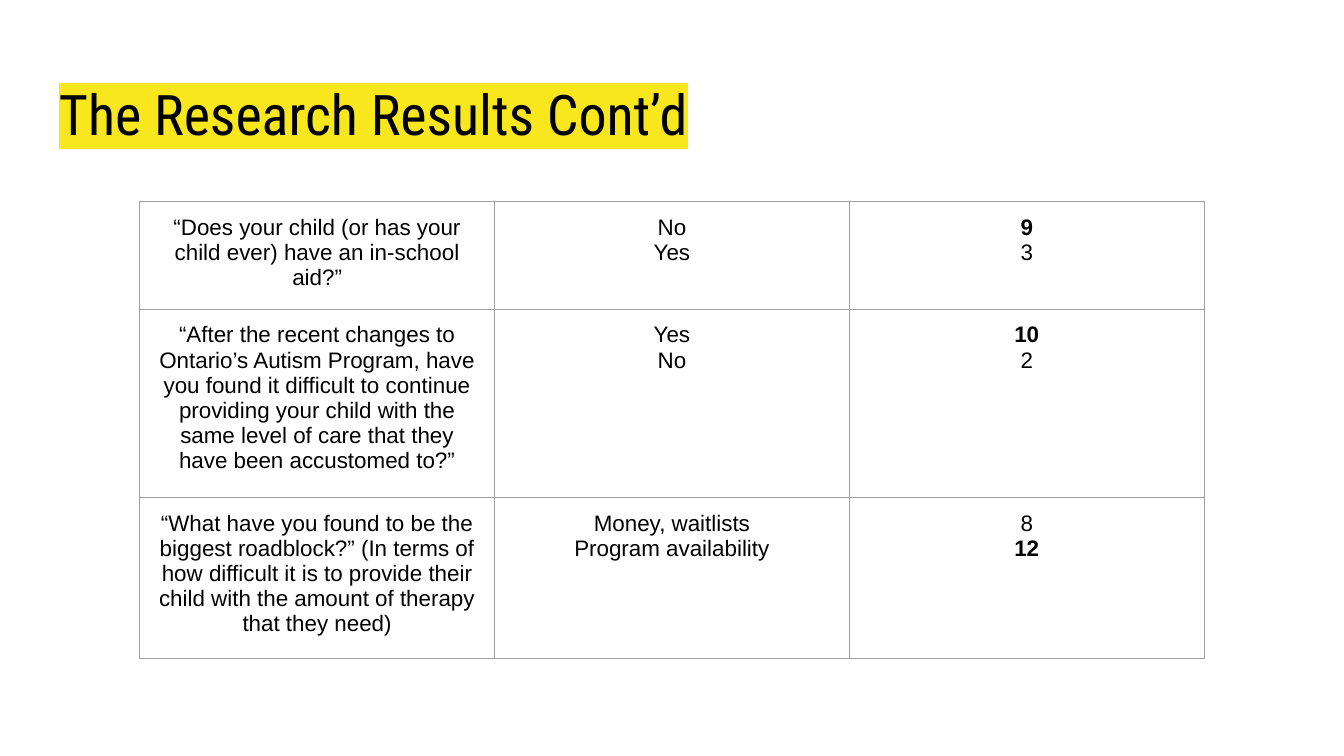
from typing import NamedTuple

import lxml.etree
import pptx
import pptx.dml.color
import pptx.enum.text
import pptx.oxml.ns
import pptx.util

Inches = pptx.util.Inches
Pt = pptx.util.Pt
qn = pptx.oxml.ns.qn

BLACK = "000000"
YELLOW = "F8E71C"
GREY = "9E9E9E"
MARGIN = 0.1
COLUMN_WIDTH = 2.64
ROW_HEIGHT = 0.42  # rows grow to fit their text
FRAME_SIDE = 3.28


class Answer(NamedTuple):
    label: str
    count: str
    leading: bool = False


class Question(NamedTuple):
    wording: str
    answers: list[Answer]


QUESTIONS = [
    Question("“Does your child (or has your child ever) have an in-school aid?”",
             [Answer("No", "9", True), Answer("Yes", "3")]),
    Question("“After the recent changes to Ontario’s Autism Program, have you found it "
             "difficult to continue providing your child with the same level of care "
             "that they have been accustomed to?”",
             [Answer("Yes", "10", True), Answer("No", "2")]),
    Question("“What have you found to be the biggest roadblock?” (In terms of how "
             "difficult it is to provide their child with the amount of therapy that "
             "they need)",
             [Answer("Money, waitlists", "8"),
              Answer("Program availability", "12", True)]),
]


def rgb(value: str) -> pptx.dml.color.RGBColor:
    return pptx.dml.color.RGBColor.from_string(value)


def add_run(paragraph, text: str, font: str, size: float, bold: bool = False):
    run = paragraph.add_run()
    run.text = text
    run.font.name = font
    run.font.size = Pt(size)
    run.font.bold = bold
    run.font.color.rgb = rgb(BLACK)
    return run


def highlight(run, color: str) -> None:
    # The highlight has to follow the text fill
    mark = lxml.etree.Element(qn("a:highlight"))
    lxml.etree.SubElement(mark, qn("a:srgbClr"), val=color)
    run.font._element.find(qn("a:solidFill")).addnext(mark)


def set_borders(cell, color: str, width: float) -> None:
    properties = cell._tc.get_or_add_tcPr()
    for position, side in enumerate(("a:lnL", "a:lnR", "a:lnT", "a:lnB")):
        line = lxml.etree.Element(qn(side), w=str(int(Pt(width))))
        fill = lxml.etree.SubElement(line, qn("a:solidFill"))
        lxml.etree.SubElement(fill, qn("a:srgbClr"), val=color)
        properties.insert(position, line)


def set_margins(holder) -> None:
    holder.margin_left = holder.margin_right = Inches(MARGIN)
    holder.margin_top = holder.margin_bottom = Inches(MARGIN)


def fill_cell(cell, lines: list[tuple[str, bool]]) -> None:
    cell.fill.background()
    set_borders(cell, GREY, 0.75)
    set_margins(cell)
    paragraph = cell.text_frame.paragraphs[0]
    paragraph.alignment = pptx.enum.text.PP_ALIGN.CENTER
    paragraph.font.size = Pt(12)
    for number, (text, bold) in enumerate(lines):
        if number:
            paragraph.add_line_break()
        add_run(paragraph, text, "Arial", 12, bold)


def add_title(slide, text: str) -> None:
    title = slide.shapes.add_textbox(Inches(0.34), Inches(0.49), Inches(9.32), Inches(0.63))
    frame = title.text_frame
    frame.word_wrap = True
    frame.vertical_anchor = pptx.enum.text.MSO_ANCHOR.TOP
    set_margins(frame)
    highlight(add_run(frame.paragraphs[0], text, "Roboto Condensed", 30), YELLOW)


def add_results(slide, questions: list[Question]) -> None:
    frame = slide.shapes.add_table(
        len(questions), 3, Inches(1.04), Inches(1.5),
        Inches(FRAME_SIDE), Inches(FRAME_SIDE))
    results = frame.table
    results.first_row = False
    results.horz_banding = False
    for column in results.columns:
        column.width = Inches(COLUMN_WIDTH)
    for row, question in enumerate(questions):
        results.rows[row].height = Inches(ROW_HEIGHT)
        fill_cell(results.cell(row, 0), [(question.wording, False)])
        fill_cell(results.cell(row, 1), [(a.label, False) for a in question.answers])
        fill_cell(results.cell(row, 2), [(a.count, a.leading) for a in question.answers])
    # Resizing columns and rows changes the frame, so its size is set last
    frame.width = frame.height = Inches(FRAME_SIDE)


def main() -> None:
    deck = pptx.Presentation()
    deck.slide_width = Inches(10)
    deck.slide_height = Inches(10 * 9 / 16)
    slide = deck.slides.add_slide(deck.slide_layouts[6])

    # Heading
    add_title(slide, "The Research Results Cont’d")

    # Survey questions, answers and counts
    add_results(slide, QUESTIONS)

    deck.save("out.pptx")


if __name__ == "__main__":
    main()
